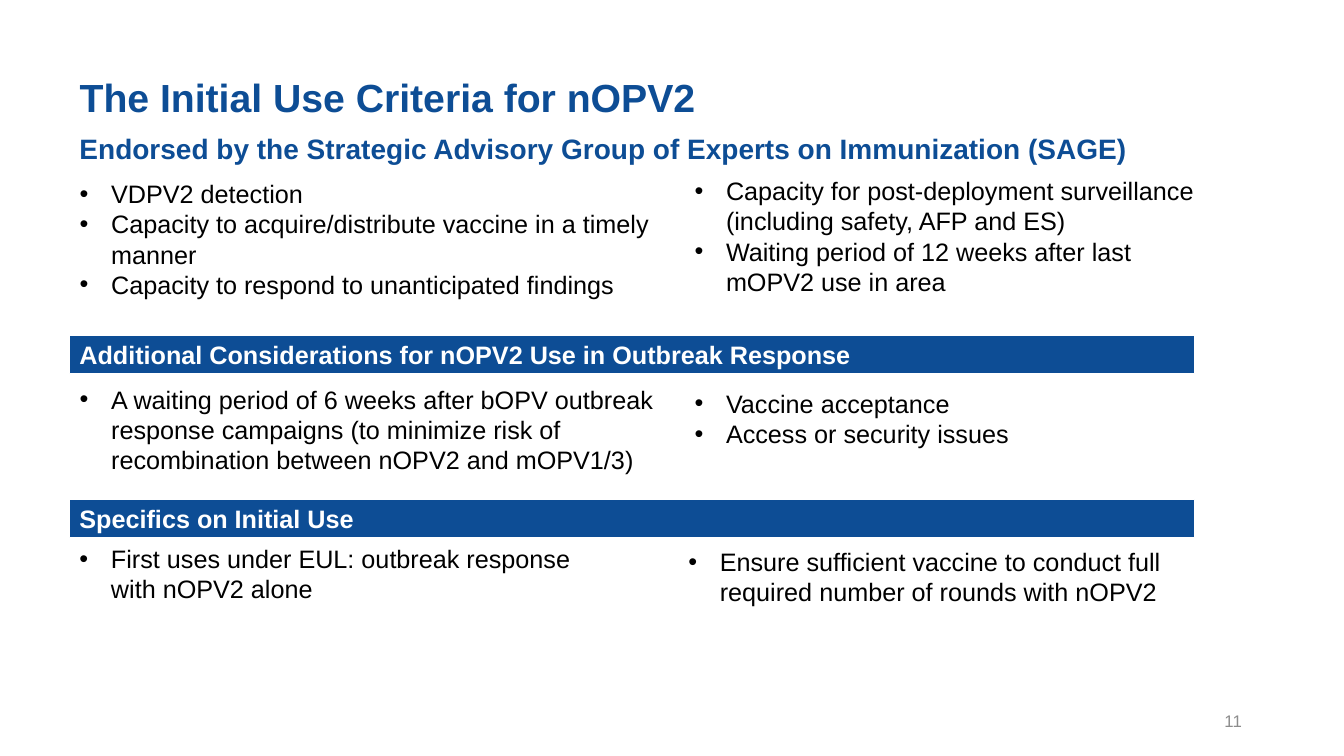
"""Build the slide on the initial use criteria for nOPV2."""
from dataclasses import dataclass
from lxml.etree import SubElement
from pptx import Presentation
from pptx.dml.color import RGBColor
from pptx.enum.shapes import MSO_SHAPE as Shape
from pptx.enum.text import MSO_ANCHOR as Anchor, MSO_AUTO_SIZE as AutoSize, PP_ALIGN as Align
from pptx.oxml.ns import qn
from pptx.util import Pt


@dataclass(frozen=True)
class Theme:
    font: str = "Arial"
    blue: RGBColor = RGBColor(0x0D, 0x4D, 0x95)
    black: RGBColor = RGBColor(0, 0, 0)
    white: RGBColor = RGBColor(255, 255, 255)
    gray: RGBColor = RGBColor(0x8C, 0x8C, 0x8C)
    title: int = 28
    subtitle: int = 20
    body: int = 18
    number: int = 12


theme = Theme()


def place(box, left, top, width, height):
    box.left, box.top, box.width, box.height = Pt(left), Pt(top), Pt(width), Pt(height)


def write(box, lines, size, color, bold=False, anchor=Anchor.TOP, align=Align.LEFT, bullets=False):
    frame = box.text_frame
    frame.text = "\n".join(lines)
    frame.word_wrap = True
    frame.auto_size = AutoSize.NONE
    frame.vertical_anchor = anchor
    for para in frame.paragraphs:
        para.alignment = align
        para.space_before = Pt(0)
        para.font.name, para.font.size, para.font.bold = theme.font, Pt(size), bold
        para.font.color.rgb = color
        if bullets:
            props = para._p.get_or_add_pPr()
            props.set("marL", str(Pt(22.5)))
            props.set("indent", str(-Pt(22.5)))
            SubElement(props, qn("a:buFont")).set("typeface", theme.font)
            SubElement(props, qn("a:buChar")).set("char", "•")


deck = Presentation()
deck.slide_width, deck.slide_height = Pt(960), Pt(540)
page = deck.slides.add_slide(deck.slide_layouts.get_by_name("Comparison"))
left_edge, right_edge = 49.7, 488.9

title, *bodies = page.placeholders
place(title, left_edge, 49, 874, 41)
write(title, ["The Initial Use Criteria for nOPV2"], theme.title, theme.blue, bold=True)

subtitle = page.shapes.add_textbox(0, 0, 0, 0)
place(subtitle, left_edge, 90.7, 811.4, 31.7)
write(subtitle, ["Endorsed by the Strategic Advisory Group of Experts on Immunization (SAGE)"],
      theme.subtitle, theme.blue, bold=True)

lists = [
    (left_edge, 123.8, 428.4, 94.3, ["VDPV2 detection",
     "Capacity to acquire/distribute vaccine in a timely manner",
     "Capacity to respond to unanticipated findings"]),
    (right_edge, 121.7, 383, 94.3, [
     "Capacity for post-deployment surveillance (including safety, AFP and ES)",
     "Waiting period of 12 weeks after last mOPV2 use in area"]),
    (left_edge, 270.7, 428.4, 72.7, [
     "A waiting period of 6 weeks after bOPV outbreak response campaigns "
     "(to minimize risk of recombination between nOPV2 and mOPV1/3)"]),
    (right_edge, 273.6, 445, 51.1, ["Vaccine acceptance", "Access or security issues"]),
    (left_edge, 384.5, 366.5, 51.1, ["First uses under EUL: outbreak response with nOPV2 alone"]),
    (484.6, 386.6, 377.3, 51.1, [
     "Ensure sufficient vaccine to conduct full required number of rounds with nOPV2"]),
]
for index, (*bounds, lines) in enumerate(lists):
    box = bodies[index] if index < len(bodies) else page.shapes.add_textbox(0, 0, 0, 0)
    place(box, *bounds)
    write(box, lines, theme.body, theme.black, bullets=True)

bands = [(239.4, "Additional Considerations for nOPV2 Use in Outbreak Response"),
         (356.6, "Specifics on Initial Use")]
for top, heading in bands:
    band = page.shapes.add_shape(Shape.RECTANGLE, Pt(left_edge), Pt(top), Pt(803.5), Pt(27.4))
    band.shadow.inherit = False
    band.fill.solid()
    band.fill.fore_color.rgb = theme.blue
    band.line.color.rgb = theme.white
    band.line.width = Pt(1)
    write(band, [heading], theme.body, theme.white, bold=True, anchor=Anchor.MIDDLE)

number = page.shapes.add_textbox(0, 0, 0, 0)
place(number, 678.2, 500.4, 216, 28.8)
write(number, ["11"], theme.number, theme.gray, anchor=Anchor.MIDDLE, align=Align.RIGHT)

deck.save("out.pptx")
